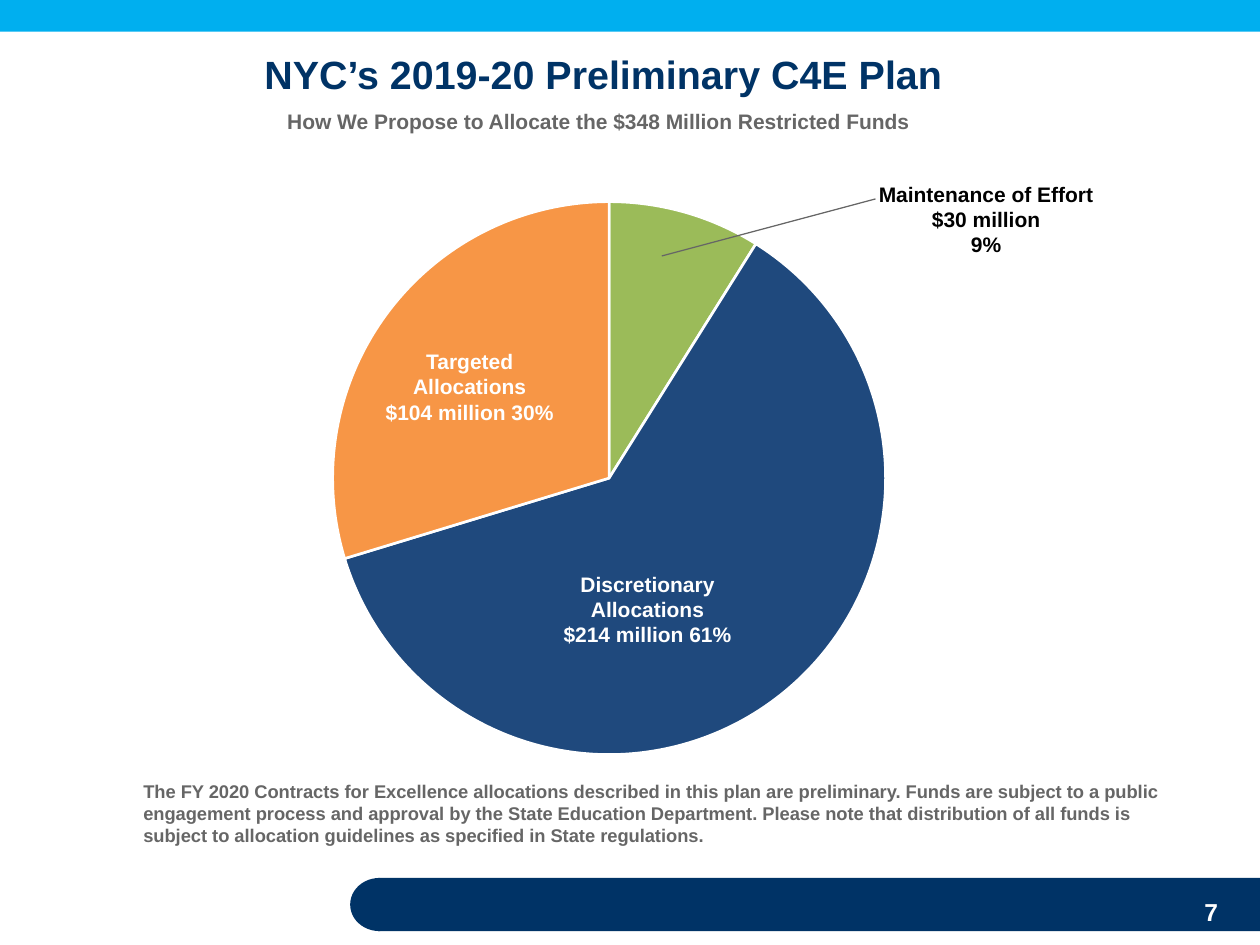
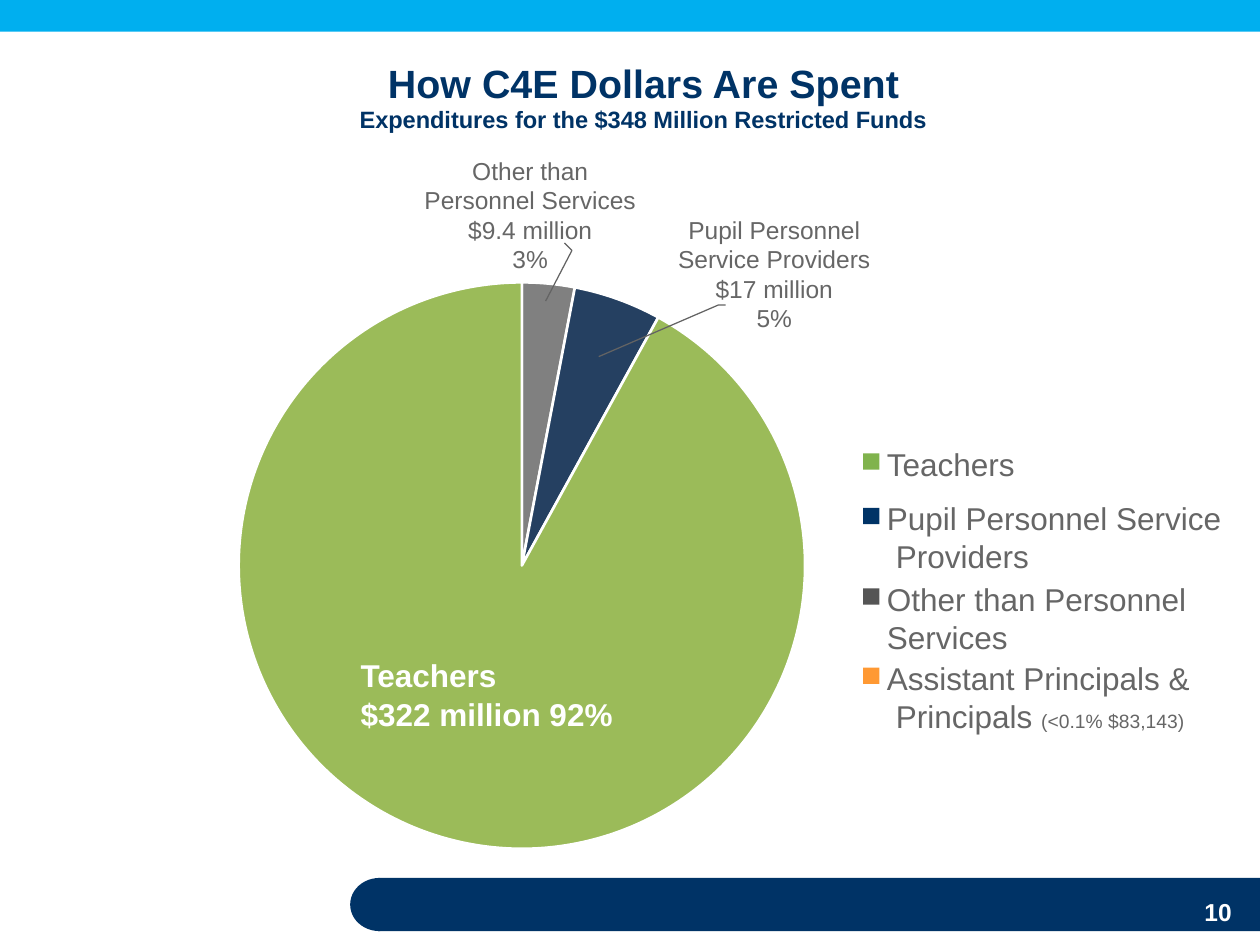
from lxml import etree
from pptx import Presentation
from pptx import util as u
from pptx.chart import data as chart_data
from pptx.dml.color import RGBColor
from pptx.enum import chart as charts, shapes, text
from pptx.oxml import ns

NAVY = RGBColor(0x00, 0x33, 0x66)
SKY = RGBColor(0x00, 0xAF, 0xEF)
WHITE = RGBColor(0xFF, 0xFF, 0xFF)
BLACK = RGBColor(0x00, 0x00, 0x00)
GREY = RGBColor(0x66, 0x66, 0x66)
LEADER = RGBColor(0x63, 0x63, 0x63)
PIE_GREEN = RGBColor(0x9B, 0xBB, 0x59)
PIE_BLUE = RGBColor(0x1F, 0x49, 0x7D)
PIE_ORANGE = RGBColor(0xF7, 0x96, 0x46)
PIE_LIGHT_BLUE = RGBColor(0x4F, 0x81, 0xBD)
PIE_GREY = RGBColor(0x80, 0x80, 0x80)
PIE_NAVY = RGBColor(0x25, 0x40, 0x61)
KEY_GREEN = RGBColor(0x80, 0xB3, 0x4D)
KEY_GREY = RGBColor(0x55, 0x55, 0x55)
KEY_ORANGE = RGBColor(0xFF, 0x99, 0x33)

LEFT, CENTER = text.PP_ALIGN.LEFT, text.PP_ALIGN.CENTER
TITLE_SIZE = 22.5


def write(slide, lines, box, size, color, bold=True, align=LEFT, gap=0):
    """Put one paragraph per line into a box given as left, top, width, height in cm."""
    frame = slide.shapes.add_textbox(*map(u.Cm, box)).text_frame
    frame.word_wrap = True
    frame.margin_left = frame.margin_right = frame.margin_top = frame.margin_bottom = 0
    frame.text = "\n".join(lines)
    for index, paragraph in enumerate(frame.paragraphs):
        paragraph.alignment = align
        if index and gap:
            paragraph.space_before = u.Pt(gap)
        for run in paragraph.runs:
            run.font.name = "Arial"
            run.font.size = u.Pt(size)
            run.font.bold = bold
            run.font.color.rgb = color
    return frame


def add_pie(slide, values, colors, box, plot):
    """Add a pie whose inner plot area is x, y, w, h as fractions of the box."""
    shares = chart_data.CategoryChartData()
    shares.categories = [str(i + 1) for i in range(len(values))]
    shares.add_series("Series 1", values)
    pie = slide.shapes.add_chart(charts.XL_CHART_TYPE.PIE, *map(u.Cm, box), shares).chart
    pie.has_legend = False
    pie.has_title = False
    pie.font.name = "Calibri"
    pie.font.size = u.Pt(10)
    pie.font.color.rgb = BLACK
    pie.plots[0].vary_by_categories = True
    for index, color in enumerate(colors):
        wedge = pie.plots[0].series[0].points[index].format
        wedge.fill.solid()
        wedge.fill.fore_color.rgb = color
        wedge.line.color.rgb = WHITE
        wedge.line.width = u.Pt(1.5)

    area = pie.element.find(".//" + ns.qn("c:plotArea"))
    for old in area.findall(ns.qn("c:layout")):
        area.remove(old)
    layout = etree.Element(ns.qn("c:layout"))
    manual = etree.SubElement(layout, ns.qn("c:manualLayout"))
    settings = [("layoutTarget", "inner"), ("xMode", "edge"), ("yMode", "edge")]
    for tag, value in settings + list(zip("xywh", plot)):
        etree.SubElement(manual, ns.qn("c:" + tag)).set("val", str(value))
    area.insert(0, layout)


deck = Presentation()
deck.slide_width, deck.slide_height = u.Cm(25.4), u.Cm(19.05)

# Bands and page numbers
bands = [
    (shapes.MSO_SHAPE.RECTANGLE, (7.62, 17.7, 17.78, 1.07), NAVY),
    (shapes.MSO_SHAPE.OVAL, (7.06, 17.7, 1.17, 1.07), NAVY),
    (shapes.MSO_SHAPE.RECTANGLE, (0, 0, 25.4, 0.64), SKY),
]
for page_number in ("7", "10"):
    slide = deck.slides.add_slide(deck.slide_layouts[6])
    for kind, box, color in bands:
        band = slide.shapes.add_shape(kind, *map(u.Cm, box))
        band.shadow.inherit = False
        band.fill.solid()
        band.fill.fore_color.rgb = color
        band.line.fill.background()
    write(slide, [page_number], (24.28, 18.09, 0.8, 0.64), 14, WHITE)
plan, spending = deck.slides

# Preliminary plan
add_pie(plan, (9, 62, 30), (PIE_GREEN, PIE_BLUE, PIE_ORANGE),
        (3.81, 3.71, 16.94, 11.86), (0.17, 0.03, 0.66, 0.94))
write(plan, ["NYC’s 2019-20 Preliminary C4E Plan"], (5.33, 1.02, 14.5, 1.02),
      TITLE_SIZE, NAVY)
write(plan, ["How We Propose to Allocate the $348 Million Restricted Funds"],
      (5.79, 2.19, 14, 0.6), 12, GREY)
write(plan, ["The FY 2020 Contracts for Excellence allocations described in this plan are "
             "preliminary. Funds are subject to a public engagement process and approval by "
             "the State Education Department. Please note that distribution of all funds is "
             "subject to allocation guidelines as specified in State regulations."],
      (2.89, 15.72, 20.7, 1.4), 10.5, GREY)
allocations = [
    (["Discretionary Allocations", "$214 million 61%"], (10.87, 11.52, 4.37, 1.57), WHITE),
    (["Targeted Allocations", "$104 million 30%"], (7.62, 7.03, 3.7, 1.57), WHITE),
    (["Maintenance of Effort", "$30 million", "9%"], (17.38, 3.66, 5, 1.57), BLACK),
]
for lines, box, color in allocations:
    write(plan, lines, box, 12, color, align=CENTER)
effort_leader = plan.shapes.add_connector(
    shapes.MSO_CONNECTOR.STRAIGHT, *map(u.Cm, (17.65, 4.01, 13.34, 5.16)))
effort_leader.line.color.rgb = GREY
effort_leader.line.width = u.Pt(0.72)
etree.SubElement(effort_leader.element.spPr, ns.qn("a:effectLst"))

# Spending
add_pie(spending, (0, 3, 5, 92), (PIE_LIGHT_BLUE, PIE_GREY, PIE_NAVY, PIE_GREEN),
        (1.07, 4.9, 19.69, 12.27), (0.19, 0.06, 0.58, 0.94))
write(spending, ["How C4E Dollars Are Spent"], (7.82, 1.2, 11, 1.02), TITLE_SIZE, NAVY)
write(spending, ["Expenditures for the $348 Million Restricted Funds"],
      (7.25, 2.12, 12, 0.64), 13.5, NAVY)
write(spending, ["Teachers", "$322 million 92%"], (7.27, 13.22, 6, 1.57), 18, WHITE, gap=0.9)
services = [
    (["Pupil Personnel Service Providers", "$17 million", "5%"], (13.64, 4.33, 3.94, 2.39)),
    (["Other than Personnel Services", "$9.4 million", "3%"], (8.53, 3.14, 4.32, 2.36)),
]
for lines, box in services:
    write(spending, lines, box, 14, GREY, bold=False, align=CENTER)
leaders = [
    [(12.07, 7.19), (14.48, 6.15), (14.63, 6.15)],
    [(11, 6.07), (11.53, 5.05), (11.38, 4.9)],
]
for leader in leaders:
    start, *rest = [(u.Cm(x), u.Cm(y)) for x, y in leader]
    outline = spending.shapes.build_freeform(*start)
    outline.add_line_segments(rest, close=False)
    leader_line = outline.convert_to_shape()
    leader_line.shadow.inherit = False
    leader_line.fill.background()
    leader_line.line.color.rgb = LEADER
    leader_line.line.width = u.Pt(0.72)

# Key: label, top of its square, colour, hanging indent
key = [
    ("Teachers", 9.14, KEY_GREEN, 0),
    ("Pupil Personnel Service Providers", 10.24, NAVY, 0.18),
    ("Other than Personnel Services", 11.86, KEY_GREY, 0),
    ("Assistant Principals & Principals ", 13.46, KEY_ORANGE, 0.18),
]
for label, top, color, hang in key:
    swatch = spending.shapes.add_shape(
        shapes.MSO_SHAPE.RECTANGLE, *map(u.Cm, (17.4, top, 0.33, 0.33)))
    swatch.shadow.inherit = False
    swatch.fill.solid()
    swatch.fill.fore_color.rgb = color
    swatch.line.fill.background()
    entry = write(spending, [label], (17.88, top - 0.17, 6.9, 1.57), 18, GREY, bold=False)
    indents = entry.paragraphs[0]._p.get_or_add_pPr()
    indents.set("marL", str(u.Cm(hang)))
    indents.set("indent", str(-u.Cm(hang)))
principals_share = entry.paragraphs[0].add_run()
principals_share.text = "(<0.1% $83,143)"
principals_share.font.name = "Arial"
principals_share.font.size = u.Pt(11)
principals_share.font.color.rgb = GREY

deck.save("out.pptx")
